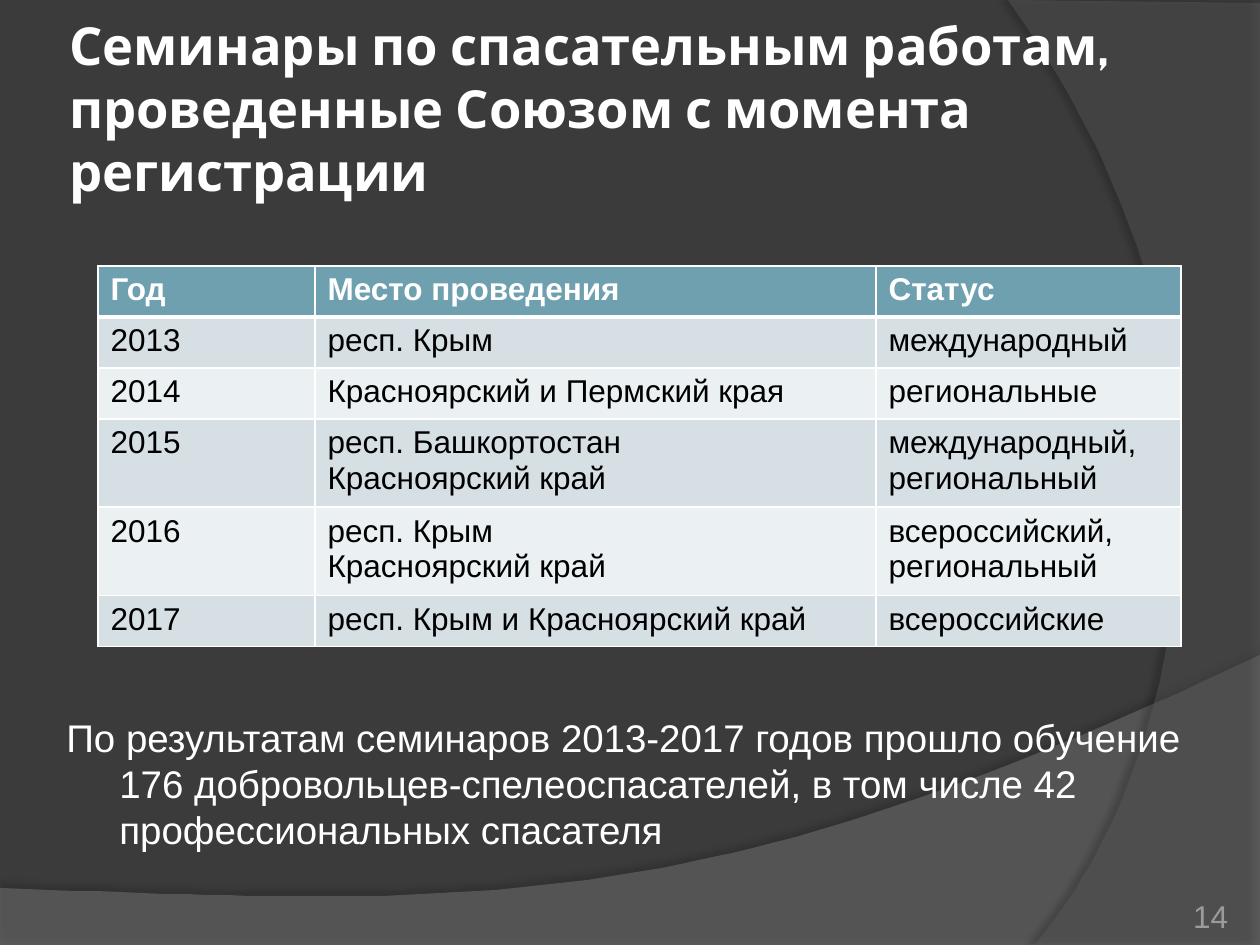
from lxml import etree
from pptx import Presentation
from pptx.dml.color import RGBColor as Color
from pptx.enum.text import MSO_ANCHOR as Anchor, PP_ALIGN as Align
from pptx.oxml import parse_xml
from pptx.oxml.ns import nsdecls, qn

SCALE = 914400 / 126  # EMU in one px

WHITE = Color(0xFF, 0xFF, 0xFF)
BLACK = Color(0x00, 0x00, 0x00)
BACK = Color(0x3B, 0x3B, 0x3B)
WAVE = Color(0x7F, 0x7F, 0x7F)
ARC = Color(0x5E, 0x5E, 0x5E)
HEAD = Color(0x6E, 0xA0, 0xB0)
BANDS = Color(0xD5, 0xDF, 0xE4), Color(0xEB, 0xF0, 0xF2)
GRAY = Color(0x9D, 0x9B, 0x9A)

ROWS = [
    ("Год", "Место проведения", "Статус"),
    ("2013", "респ. Крым", "международный"),
    ("2014", "Красноярский и Пермский края", "региональные"),
    ("2015", "респ. Башкортостан\nКрасноярский край", "международный,\nрегиональный"),
    ("2016", "респ. Крым\nКрасноярский край", "всероссийский, региональный"),
    ("2017", "респ. Крым и Красноярский край", "всероссийские"),
]
WIDTHS = 217, 561, 305
HEIGHTS = 51, 51, 51, 84, 84, 51


def px(num):
    return round(num * SCALE)


def place(shape, x, y, w, h):
    shape.left, shape.top, shape.width, shape.height = map(px, (x, y, w, h))


def put(frame, text, size=18, font="Arial", color=WHITE, bold=False,
        align=Align.LEFT, anchor=Anchor.TOP, inset=None, indent=None):
    frame.word_wrap = True
    frame.vertical_anchor = anchor
    if inset is not None:
        frame.margin_left = frame.margin_right = px(inset)
        frame.margin_top = frame.margin_bottom = px(inset)
    frame.text = text
    for para in frame.paragraphs:
        para.alignment = align
        if indent:
            props = para._p.get_or_add_pPr()
            props.set("marL", str(px(indent[0])))
            props.set("indent", str(px(indent[1])))
        style = para.font
        style.size, style.name, style.bold = round(size * 12700), font, bold
        style.color.rgb = color


def add_text(slide, box, text, **kw):
    shape = slide.shapes.add_textbox(*map(px, box))
    put(shape.text_frame, text, **kw)


def curve(ends, steps=60):
    """Points along a cubic curve, after its first end."""
    for i in range(1, steps + 1):
        t = i / steps
        parts = (1 - t) ** 3, 3 * t * (1 - t) ** 2, 3 * t * t * (1 - t), t ** 3
        yield tuple(sum(k * p[axis] for k, p in zip(parts, ends))
                    for axis in (0, 1))


def add_sweep(slide, line, bend, color, alpha, shade, dist, angle):
    """A see-through outline: straight edges, then a curve from the last."""
    pen = slide.shapes.build_freeform(*line[0], scale=SCALE)
    pen.add_line_segments(line[1:] + list(curve([line[-1], *bend])), close=True)
    shape = pen.convert_to_shape()
    shape.fill.solid()
    shape.fill.fore_color.rgb = color
    shape.line.fill.background()
    shape.shadow.inherit = False
    props = shape.element.spPr
    tint = props.find(qn("a:solidFill"))[0]
    etree.SubElement(tint, qn("a:alpha"), val=str(alpha * 1000))
    props.find(qn("a:effectLst")).append(parse_xml(
        f'<a:outerShdw {nsdecls("a")} blurRad="50800" dist="{round(dist * 12700)}" '
        f'dir="{angle * 60000}" algn="ctr" rotWithShape="0"><a:srgbClr val="000000">'
        f'<a:alpha val="{shade * 1000}"/></a:srgbClr></a:outerShdw>'))


def edge(cell, low):
    """White borders, with the lower one of the given width in points."""
    props = cell._tc.get_or_add_tcPr()
    for side, width in zip("LRTB", (1, 1, 1, low)):
        props.append(parse_xml(
            f'<a:ln{side} {nsdecls("a")} w="{width * 12700}"><a:solidFill>'
            f'<a:srgbClr val="{WHITE}"/></a:solidFill></a:ln{side}>'))


def add_grid(slide, x, y):
    size = sum(WIDTHS), sum(HEIGHTS)
    table = slide.shapes.add_table(
        len(ROWS), len(WIDTHS), *map(px, (x, y, *size))).table
    for col, width in zip(table.columns, WIDTHS):
        col.width = px(width)
    for r, (row, height) in enumerate(zip(ROWS, HEIGHTS)):
        table.rows[r].height = px(height)
        top = r == 0
        for c, text in enumerate(row):
            cell = table.cell(r, c)
            edge(cell, 3 if top else 1)
            cell.fill.solid()
            cell.fill.fore_color.rgb = HEAD if top else BANDS[(r - 1) % 2]
            put(cell.text_frame, text, color=WHITE if top else BLACK, bold=top)


def main():
    deck = Presentation()
    deck.slide_width, deck.slide_height = px(1260), px(945)
    slide = deck.slides.add_slide(deck.slide_layouts[5])

    # Backdrop
    slide.background.fill.solid()
    slide.background.fill.fore_color.rgb = BACK
    add_sweep(slide, [(0, 888), (0, 946), (1260, 946), (1260, 655)],
              [(704, 919), (493, 906), (0, 888)], WAVE, 45, 35, 3.5, 270)
    add_sweep(slide, [(1260, 3), (1260, 945), (1034, 945)],
              [(1178, 780), (1283, 378), (1008, 0)], ARC, 40, 45, 4, 180)

    # Title, in front of the backdrop
    title = slide.shapes.title
    title.element.getparent().append(title.element)
    place(title, 63, 38, 1119, 140)
    put(title.text_frame, "Семинары по спасательным работам, проведенные "
        "Союзом с момента регистрации", size=30, font="Cabin", bold=True,
        anchor=Anchor.MIDDLE, inset=6)

    # Summary
    add_text(slide, (49, 708, 1177, 186),
             "По результатам семинаров 2013-2017 годов прошло обучение "
             "176 добровольцев-спелеоспасателей, в том числе "
             "42 профессиональных спасателя", size=22, indent=(58, -53))

    # Seminars
    add_grid(slide, 98, 266)

    # Page number
    add_text(slide, (1124, 885, 104, 50), "14", color=GRAY,
             align=Align.RIGHT, anchor=Anchor.BOTTOM, inset=0)

    deck.save("out.pptx")


if __name__ == "__main__":
    main()
